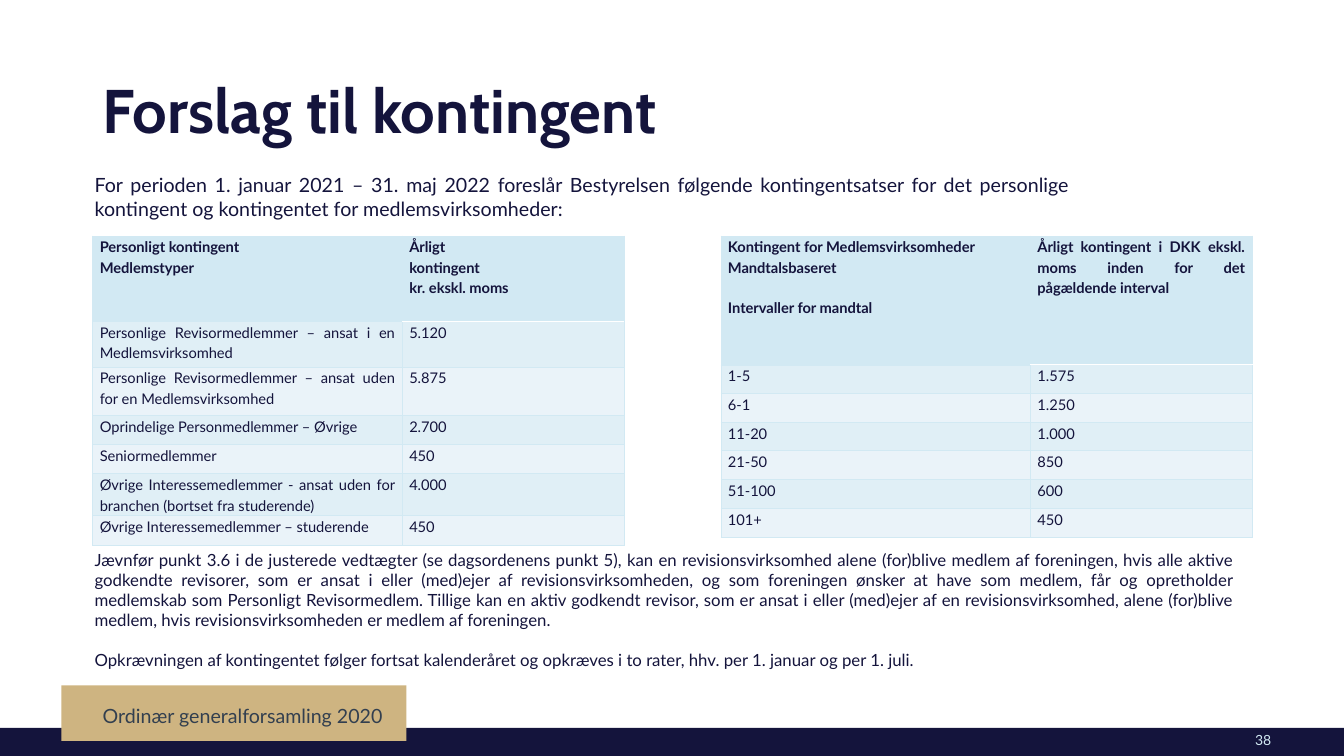
from dataclasses import dataclass
from typing import NamedTuple

from lxml import etree
from pptx import Presentation
from pptx.dml.color import RGBColor
from pptx.enum import shapes, text
from pptx.oxml import ns
from pptx.util import Pt

EMU_PER_PX = 9144  # 100 px to the inch


@dataclass(frozen=True)
class Theme:
    navy: str = "14143C"
    gold: str = "CEB481"
    slate: str = "323F4F"
    ice: str = "D2E9F3"
    band_dark: str = "E0EFF6"
    band_light: str = "EAF3F9"
    white: str = "FFFFFF"
    heading_font: str = "Cabin"
    body_font: str = "Lato"
    title_size: float = 44
    lead_size: float = 14
    note_size: float = 12
    table_size: float = 10.5
    number_size: float = 10


THEME = Theme()


class Box(NamedTuple):
    left: int
    top: int
    width: int
    height: int

    def emu(self) -> list[int]:
        return [px * EMU_PER_PX for px in self]


class Style(NamedTuple):
    size: float
    color: str = THEME.navy
    font: str = THEME.body_font
    bold: bool = False
    justify: bool = False
    line_spacing: float = 1.0


class TextBlock(NamedTuple):
    box: Box
    lines: list[str]
    style: Style
    middle: bool = False
    gap: float = 0


class RateTable(NamedTuple):
    left: int
    heads: tuple[list[str], list[str]]
    gap_before_last_head: float
    rows: list[tuple[str, str]]
    heights: list[int]


TABLE_TOP = 234
COLUMN_WIDTHS = (307, 220)
CELL_INSET = 7

BARS = [
    (Box(0, 722, 1333, 28), THEME.navy),
    (Box(61, 680, 342, 55), THEME.gold),
]

TEXTS = [
    TextBlock(Box(1235, 721, 74, 40), ["38"], Style(THEME.number_size, THEME.ice)),
    TextBlock(Box(92, 40, 1007, 145), ["Forslag til kontingent"],
              Style(THEME.title_size, font=THEME.heading_font, bold=True, line_spacing=0.9),
              middle=True),
    TextBlock(Box(92, 690, 450, 40), ["Ordinær generalforsamling 2020"],
              Style(THEME.lead_size, THEME.slate), middle=True),
    TextBlock(Box(84, 167, 987, 57), [
        "For perioden 1. januar 2021 – 31. maj 2022 foreslår Bestyrelsen følgende "
        "kontingentsatser for det personlige kontingent og kontingentet for "
        "medlemsvirksomheder:"], Style(THEME.lead_size, justify=True)),
    TextBlock(Box(84, 540, 1150, 131), [
        "Jævnfør punkt 3.6 i de justerede vedtægter (se dagsordenens punkt 5), kan en "
        "revisionsvirksomhed alene (for)blive medlem af foreningen, hvis alle aktive "
        "godkendte revisorer, som er ansat i eller (med)ejer af revisionsvirksomheden, og "
        "som foreningen ønsker at have som medlem, får og opretholder medlemskab som "
        "Personligt Revisormedlem. Tillige kan en aktiv godkendt revisor, som er ansat i "
        "eller (med)ejer af en revisionsvirksomhed, alene (for)blive medlem, hvis "
        "revisionsvirksomheden er medlem af foreningen.",
        "Opkrævningen af kontingentet følger fortsat kalenderåret og opkræves i to rater, "
        "hhv. per 1. januar og per 1. juli."],
        Style(THEME.note_size, justify=True), gap=14.4),
]

TABLES = [
    RateTable(
        92,
        (["Personligt kontingent", "Medlemstyper"],
         ["Årligt", "kontingent", "kr. ekskl. moms"]),
        0,
        [("Personlige Revisormedlemmer – ansat i en Medlemsvirksomhed", "5.120"),
         ("Personlige Revisormedlemmer – ansat uden for en Medlemsvirksomhed", "5.875"),
         ("Oprindelige Personmedlemmer – Øvrige", "2.700"),
         ("Seniormedlemmer", "450"),
         ("Øvrige Interessemedlemmer - ansat uden for branchen (bortset fra studerende)",
          "4.000"),
         ("Øvrige Interessemedlemmer – studerende", "450")],
        [85, 45, 48, 29, 29, 41, 30]),
    RateTable(
        715,
        (["Kontingent for Medlemsvirksomheder", "Mandtalsbaseret", "Intervaller for mandtal"],
         ["Årligt kontingent i DKK ekskl. moms inden for det pågældende interval"]),
        14.4,
        [("1-5", "1.575"), ("6-1", "1.250"), ("11-20", "1.000"),
         ("21-50", "850"), ("51-100", "600"), ("101+", "450")],
        [128] + [28, 29] * 3),
]


def write(frame, lines: list[str], style: Style, gap_before_last: float = 0) -> None:
    frame.word_wrap = True
    frame.text = "\n".join(lines)
    for paragraph in frame.paragraphs:
        paragraph.line_spacing = style.line_spacing
        if style.justify:
            paragraph.alignment = text.PP_ALIGN.JUSTIFY
        for run in paragraph.runs:
            run.font.name = style.font
            run.font.size = Pt(style.size)
            run.font.bold = style.bold
            run.font.color.rgb = RGBColor.from_string(style.color)
    if gap_before_last:
        frame.paragraphs[-1].space_before = Pt(gap_before_last)


def add_bar(slide, box: Box, color: str) -> None:
    bar = slide.shapes.add_shape(shapes.MSO_SHAPE.RECTANGLE, *box.emu())
    bar.shadow.inherit = False
    bar.fill.solid()
    bar.fill.fore_color.rgb = RGBColor.from_string(color)
    bar.line.fill.background()


def add_text(slide, block: TextBlock) -> None:
    frame = slide.shapes.add_textbox(*block.box.emu()).text_frame
    if block.middle:
        frame.vertical_anchor = text.MSO_ANCHOR.MIDDLE
    write(frame, block.lines, block.style, block.gap)


def set_borders(cell, white_sides: str) -> None:
    """Draw all four cell borders, white on the named sides (L, R, T, B)."""
    properties = cell._tc.get_or_add_tcPr()
    for position, side in enumerate("LRTB"):
        white = side in white_sides
        line = etree.Element(ns.qn(f"a:ln{side}"), w=str(Pt(1 if white else 0.5)))
        fill = etree.SubElement(line, ns.qn("a:solidFill"))
        etree.SubElement(fill, ns.qn("a:srgbClr"), val=THEME.white if white else THEME.ice)
        properties.insert(position, line)


def add_rate_table(slide, rates: RateTable) -> None:
    box = Box(rates.left, TABLE_TOP, sum(COLUMN_WIDTHS), sum(rates.heights))
    table = slide.shapes.add_table(len(rates.heights), len(COLUMN_WIDTHS), *box.emu()).table
    table.first_row = table.horz_banding = False
    for column, width in zip(table.columns, COLUMN_WIDTHS):
        column.width = width * EMU_PER_PX
    for row, height in zip(table.rows, rates.heights):
        row.height = height * EMU_PER_PX

    contents = [rates.heads] + [([label], [rate]) for label, rate in rates.rows]
    for r, row_lines in enumerate(contents):
        head = r == 0
        color = THEME.ice if head else THEME.band_dark if r % 2 else THEME.band_light
        for c, lines in enumerate(row_lines):
            cell = table.cell(r, c)
            cell.margin_left = cell.margin_right = CELL_INSET * EMU_PER_PX
            cell.margin_top = cell.margin_bottom = 0
            cell.fill.solid()
            cell.fill.fore_color.rgb = RGBColor.from_string(color)
            set_borders(cell, {0: "B", 1: "T"}.get(r, "") if c == 1 else "")
            gap = rates.gap_before_last_head if head and c == 0 else 0
            write(cell.text_frame, lines,
                  Style(THEME.table_size, bold=head, justify=True, line_spacing=1.15), gap)


def main() -> None:
    deck = Presentation()
    deck.slide_width, deck.slide_height = 1333 * EMU_PER_PX, 750 * EMU_PER_PX
    slide = deck.slides.add_slide(deck.slide_layouts[6])
    for box, color in BARS:
        add_bar(slide, box, color)
    for block in TEXTS:
        add_text(slide, block)
    for rates in TABLES:
        add_rate_table(slide, rates)
    deck.save("out.pptx")


if __name__ == "__main__":
    main()
